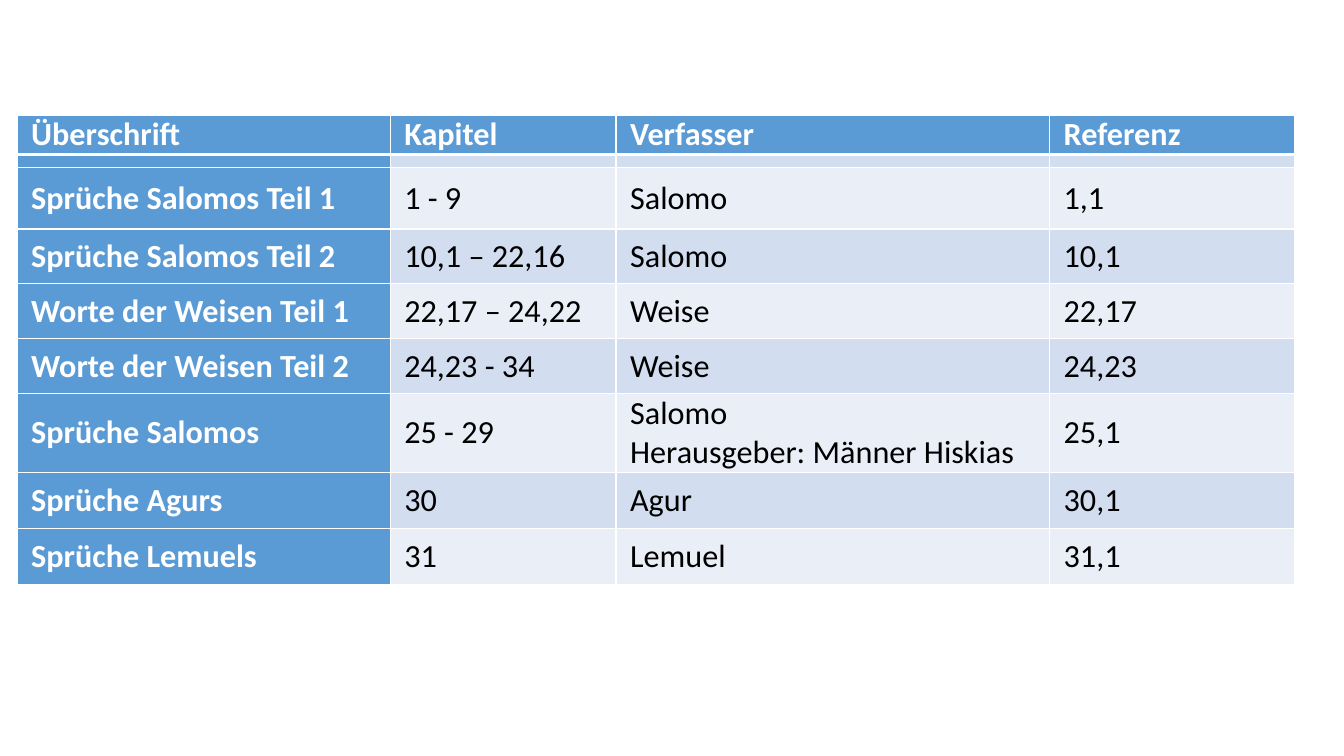
from lxml.etree import SubElement
from pptx import Presentation
from pptx.dml.color import RGBColor
from pptx.enum.text import MSO_ANCHOR as Anchor
from pptx.oxml.ns import qn
from pptx.util import Pt

PX = 9144
BLUE, PALE, LIGHT = "5B9BD5", "D2DEEF", "EAEFF7"
WHITE, BLACK = "FFFFFF", "000000"
COLUMN_WIDTHS = [370, 224, 430, 243]
ROW_HEIGHTS = [39, 13, 61, 54, 55, 54, 77, 56, 55]
PROVERBS = [
    ["Überschrift", "Kapitel", "Verfasser", "Referenz"],
    ["", "", "", ""],
    ["Sprüche Salomos Teil 1", "1 - 9", "Salomo", "1,1"],
    ["Sprüche Salomos Teil 2", "10,1 – 22,16", "Salomo", "10,1"],
    ["Worte der Weisen Teil 1", "22,17 – 24,22", "Weise", "22,17"],
    ["Worte der Weisen Teil 2", "24,23 - 34", "Weise", "24,23"],
    ["Sprüche Salomos", "25 - 29", "Salomo\nHerausgeber: Männer Hiskias", "25,1"],
    ["Sprüche Agurs", "30", "Agur", "30,1"],
    ["Sprüche Lemuels", "31", "Lemuel", "31,1"],
]


def px(length):
    return length * PX


def paint(fill, color):
    fill.solid()
    fill.fore_color.rgb = RGBColor.from_string(color)


def draw_borders(cell, top, bottom):
    properties = cell._tc.get_or_add_tcPr()
    for side, points in (("L", 1), ("R", 1), ("T", top), ("B", bottom)):
        border = SubElement(properties, qn(f"a:ln{side}"), w=str(Pt(points)))
        solid = SubElement(border, qn("a:solidFill"))
        SubElement(solid, qn("a:srgbClr"), val=WHITE)


def write_cell(cell, words, color, bold):
    cell.margin_left = cell.margin_right = px(14)
    cell.margin_top = cell.margin_bottom = 0
    cell.text_frame.text = words
    for paragraph in cell.text_frame.paragraphs:
        if not words:
            SubElement(paragraph._p, qn("a:endParaRPr"), sz="500")
        for run in paragraph.runs:
            run.font.name = "Calibri"
            run.font.size = Pt(23)
            run.font.bold = bold
            run.font.color.rgb = RGBColor.from_string(color)


def add_proverbs_table(slide, left, top):
    frame = slide.shapes.add_table(
        len(PROVERBS), len(COLUMN_WIDTHS), px(left), px(top),
        px(sum(COLUMN_WIDTHS)), px(sum(ROW_HEIGHTS)))
    table = frame.table
    for column, width in zip(table.columns, COLUMN_WIDTHS):
        column.width = px(width)
    for r, (entries, height) in enumerate(zip(PROVERBS, ROW_HEIGHTS)):
        table.rows[r].height = px(height)
        for c, words in enumerate(entries):
            cell = table.cell(r, c)
            heading = r == 0 or c == 0
            write_cell(cell, words, WHITE if heading else BLACK, heading)
            cell.vertical_anchor = Anchor.MIDDLE if r > 1 else Anchor.TOP
            draw_borders(cell, 3 if r == 1 else 1, 3 if r == 0 else 1)
            paint(cell.fill, BLUE if heading else PALE if r % 2 else LIGHT)


def main():
    deck = Presentation()
    deck.slide_width, deck.slide_height = px(1333), px(750)
    slide = deck.slides.add_slide(deck.slide_layouts[6])
    paint(slide.background.fill, WHITE)
    add_proverbs_table(slide, 17, 114)
    deck.save("out.pptx")


if __name__ == "__main__":
    main()
